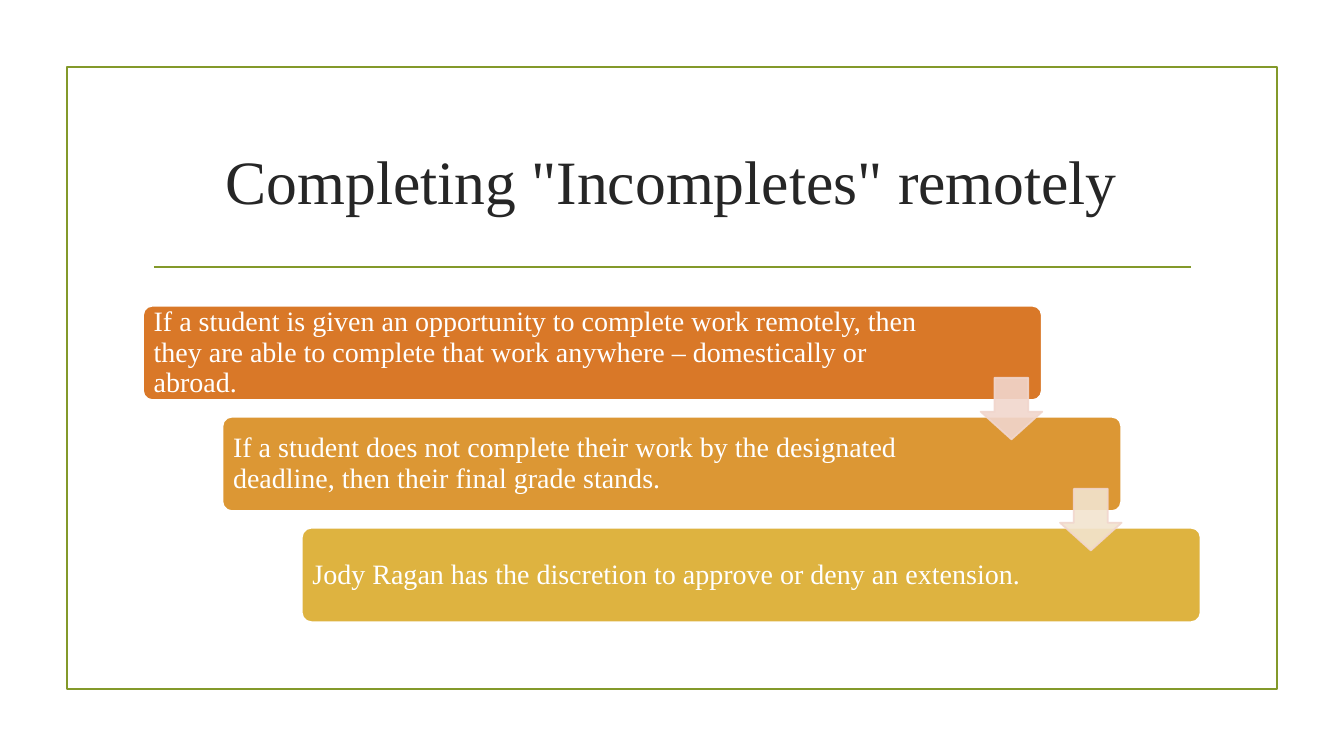
from lxml import etree
from pptx import Presentation
from pptx.dml.color import RGBColor
from pptx.enum.shapes import MSO_CONNECTOR, MSO_SHAPE
from pptx.enum.text import MSO_ANCHOR, PP_ALIGN
from pptx.oxml.ns import qn
from pptx.util import Pt

RECTANGLE = MSO_SHAPE.RECTANGLE
ROUNDED = MSO_SHAPE.ROUNDED_RECTANGLE
DOWN_ARROW = MSO_SHAPE.DOWN_ARROW
STRAIGHT = MSO_CONNECTOR.STRAIGHT
MIDDLE = MSO_ANCHOR.MIDDLE
LEFT, CENTER = PP_ALIGN.LEFT, PP_ALIGN.CENTER

FONT = "Times New Roman"
GREEN, WHITE, DARK, PINK = "83992A", "FFFFFF", "262626", "F1D6CD"
LINE_WIDTH = 1.25

# Step text, fill and right inset of the text
STEPS = [
    ("If a student is given an opportunity to complete work remotely, then they are able "
     "to complete that work anywhere – domestically or abroad.", "D97828", 75),
    ("If a student does not complete their work by the designated deadline, "
     "then their final grade stands.", "DC9734", 106),
    ("Jody Ragan has the discretion to approve or deny an extension.", "DEB340", 106),
]
ARROW_FILLS = [PINK, "F2E4CF"]
STEP_LEFT, STEP_TOP, STEP_WIDTH, STEP_HEIGHT = 102.2, 218.4, 642, 67.4
SHIFT_X, SHIFT_Y = 56.7, 79.3
ARROW_LEFT, ARROW_TOP, ARROW_SIZE = 700.5, 269.9, 44


def color(hex_code):
    return RGBColor.from_string(hex_code)


def set_opacity(color_format, percent):
    """Give every solid colour below the element the same opacity."""
    for value in color_format.iter(qn("a:srgbClr")):
        etree.SubElement(value, qn("a:alpha")).set("val", str(percent * 1000))


def add_block(slide, kind, box, fill=None, line=None, adjustments=()):
    block = slide.shapes.add_shape(kind, *map(Pt, box))
    block.shadow.inherit = False
    if fill:
        block.fill.solid()
        block.fill.fore_color.rgb = color(fill)
    else:
        block.fill.background()
    block.line.color.rgb = color(line)
    block.line.width = Pt(LINE_WIDTH)
    for index, value in enumerate(adjustments):
        block.adjustments[index] = value
    return block


def write(frame, text, size, font_color, align=LEFT, spacing=1.0, insets=(7.2, 0, 7.2, 0)):
    """Fill a text frame; insets are left, top, right, bottom."""
    frame.word_wrap = True
    frame.vertical_anchor = MIDDLE
    (frame.margin_left, frame.margin_top,
     frame.margin_right, frame.margin_bottom) = map(Pt, insets)
    paragraph = frame.paragraphs[0]
    paragraph.alignment = align
    paragraph.line_spacing = spacing
    run = paragraph.add_run()
    run.text = text
    run.font.name = FONT
    run.font.size = Pt(size)
    run.font.color.rgb = color(font_color)


def add_rule(slide, start_x, end_x, y):
    rule = slide.shapes.add_connector(STRAIGHT, Pt(start_x), Pt(y), Pt(end_x), Pt(y))
    rule.line.color.rgb = color(GREEN)
    rule.line.width = Pt(LINE_WIDTH)
    etree.SubElement(rule._element.spPr, qn("a:effectLst"))


def add_step(slide, index, text, fill, right_inset):
    box = (STEP_LEFT + index * SHIFT_X, STEP_TOP + index * SHIFT_Y, STEP_WIDTH, STEP_HEIGHT)
    step = add_block(slide, ROUNDED, box, fill, WHITE, [0.1])
    write(step.text_frame, text, 20, WHITE, spacing=0.9, insets=(5.6, 0, right_inset, 0))


def add_step_arrow(slide, index, fill):
    box = (ARROW_LEFT + index * SHIFT_X, ARROW_TOP + index * SHIFT_Y, ARROW_SIZE, ARROW_SIZE)
    arrow = add_block(slide, DOWN_ARROW, box, fill, PINK, [0.55, 0.45])
    set_opacity(arrow._element.spPr, 90)


def main():
    deck = Presentation()
    deck.slide_width, deck.slide_height = Pt(960), Pt(540)
    slide = deck.slides.add_slide(deck.slide_layouts[6])

    add_block(slide, RECTANGLE, (48, 48, 864, 444), line=GREEN)
    add_rule(slide, 110, 850.5, 190.8)
    title = slide.shapes.add_textbox(Pt(102), Pt(77), Pt(756), Pt(103))
    write(title.text_frame, 'Completing "Incompletes" remotely', 44, DARK, align=CENTER)

    for index, (text, fill, right_inset) in enumerate(STEPS):
        add_step(slide, index, text, fill, right_inset)
    for index, fill in enumerate(ARROW_FILLS):
        add_step_arrow(slide, index, fill)

    deck.save("out.pptx")


if __name__ == "__main__":
    main()
